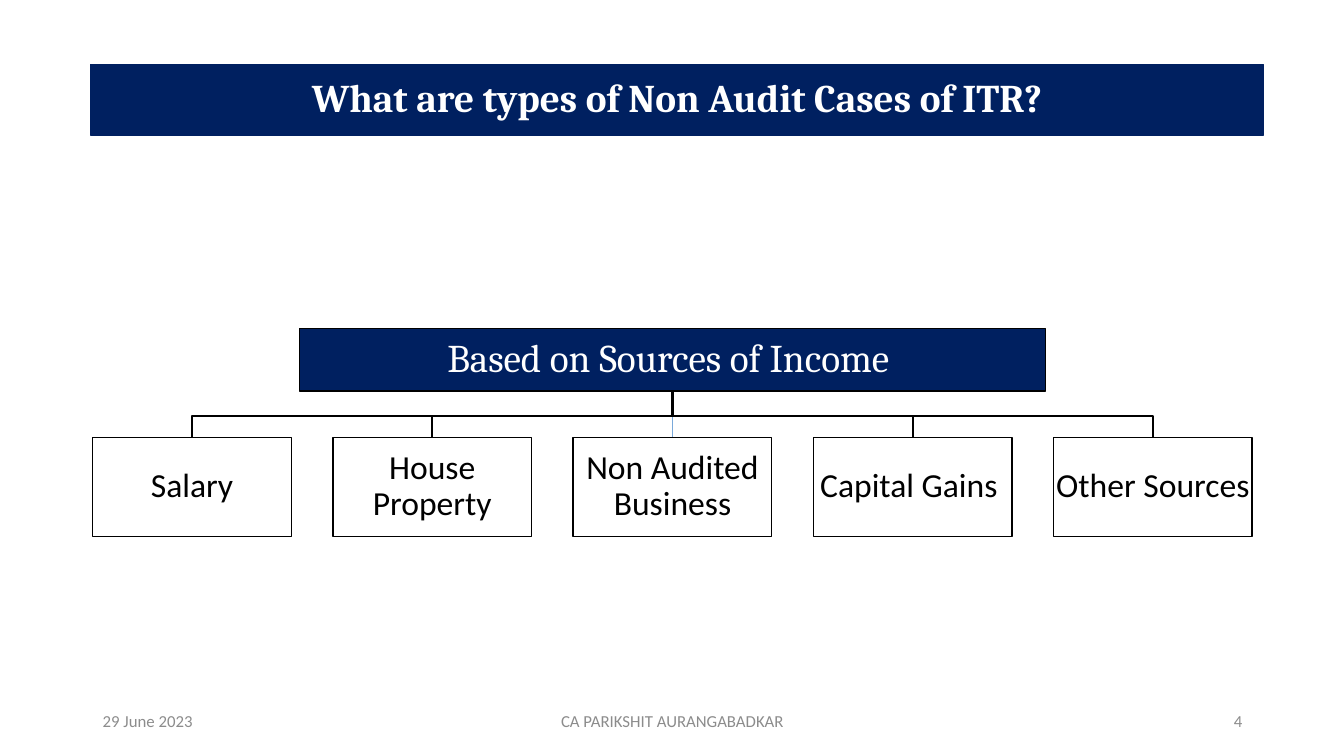
from lxml import etree
from pptx import Presentation
from pptx.dml.color import RGBColor
from pptx.enum.shapes import MSO_CONNECTOR, MSO_SHAPE
from pptx.enum.text import MSO_ANCHOR, PP_ALIGN
from pptx.oxml.ns import qn
from pptx.util import Inches, Pt

RECT = MSO_SHAPE.RECTANGLE
STRAIGHT = MSO_CONNECTOR.STRAIGHT
MIDDLE = MSO_ANCHOR.MIDDLE
LEFT, CENTER, RIGHT = PP_ALIGN.LEFT, PP_ALIGN.CENTER, PP_ALIGN.RIGHT
NAVY, BLACK, WHITE = "002060", "000000", "FFFFFF"
GREY, LIGHT_BLUE = "8C8C8C", "7AA9DA"
SOURCES = ["Salary", "House Property", "Non Audited Business",
           "Capital Gains ", "Other Sources"]


def rgb(value):
    return RGBColor.from_string(value)


def write(sp, text, size, font, color, align=CENTER, bold=False, spacing=0.9, inset=None):
    tf = sp.text_frame
    tf.word_wrap = True
    tf.vertical_anchor = MIDDLE
    if inset is not None:
        tf.margin_left = tf.margin_right = Inches(inset)
        tf.margin_top = tf.margin_bottom = Inches(inset)
    p = tf.paragraphs[0]
    p.alignment = align
    p.line_spacing = spacing
    r = p.add_run()
    r.text = text
    r.font.size = Pt(size)
    r.font.name = font
    r.font.bold = bold
    r.font.color.rgb = rgb(color)


def add_box(s, x, y, w, h, fill, line):
    sp = s.shapes.add_shape(RECT, Inches(x), Inches(y), Inches(w), Inches(h))
    sp.shadow.inherit = False
    sp.fill.solid()
    sp.fill.fore_color.rgb = rgb(fill)
    sp.line.color.rgb = rgb(line)
    sp.line.width = Pt(1)
    return sp


def add_elbow(s, x1, y1, x2, y2, bend):
    points = [(x1, bend), (x2, bend), (x2, y2)]
    builder = s.shapes.build_freeform(Inches(x1), Inches(y1))
    builder.add_line_segments([(Inches(x), Inches(y)) for x, y in points], close=False)
    sp = builder.convert_to_shape()
    sp.shadow.inherit = False
    sp.fill.background()
    sp.line.color.rgb = rgb(BLACK)
    sp.line.width = Pt(1.5)


def add_link(s, parent, child):
    link = s.shapes.add_connector(STRAIGHT, 0, 0, 0, 0)
    link.begin_connect(parent, 2)
    link.end_connect(child, 0)
    link.line.color.rgb = rgb(LIGHT_BLUE)
    link.line.width = Pt(1)
    etree.SubElement(link._element.spPr, qn("a:effectLst"))


def title_bar(s, x, y, w, h):
    sp = add_box(s, x, y, w, h, NAVY, NAVY)
    write(sp, "What are types of Non Audit Cases of ITR?", 28, "Cambria", WHITE, bold=True)


def source_tree(s, x, y, w, h):
    root_w, root_h, leaf_w, leaf_h = 7.4, 0.62, 1.97, 0.98
    center, root_bottom, leaf_top = x + w / 2, y + root_h, y + h - leaf_h
    root = add_box(s, center - root_w / 2, y, root_w, root_h, NAVY, BLACK)
    write(root, "Based on Sources of Income ", 28, "Cambria", WHITE, inset=0.02)

    step = (w - leaf_w) / (len(SOURCES) - 1)
    leaves = []
    for i, source in enumerate(SOURCES):
        leaf = add_box(s, x + i * step, leaf_top, leaf_w, leaf_h, WHITE, BLACK)
        write(leaf, source, 24, "Calibri", BLACK, inset=0.02)
        leaves.append(leaf)

    middle = len(SOURCES) // 2
    add_link(s, root, leaves[middle])
    for i in range(len(SOURCES)):
        if i != middle:
            leaf_x = x + i * step + leaf_w / 2
            add_elbow(s, center, root_bottom, leaf_x, leaf_top, root_bottom + 0.25)


def footer(s, x, y, w, h):
    side_w, center_w = 3, 4.5
    parts = [
        ("29 June 2023", x, side_w, LEFT),
        ("CA PARIKSHIT AURANGABADKAR", x + (w - center_w) / 2, center_w, CENTER),
        ("4", x + w - side_w, side_w, RIGHT),
    ]
    for text, left, width, align in parts:
        sp = s.shapes.add_textbox(Inches(left), Inches(y), Inches(width), Inches(h))
        write(sp, text, 12, "Calibri", GREY, align, spacing=1.0)


def main():
    prs = Presentation()
    prs.slide_width, prs.slide_height = Inches(13.33), Inches(7.5)
    s = prs.slides.add_slide(prs.slide_layouts[6])
    title_bar(s, 0.9, 0.64, 11.63, 0.7)
    source_tree(s, 0.92, 3.26, 11.5, 2.06)
    footer(s, 0.92, 6.95, 11.5, 0.4)
    prs.save("out.pptx")


if __name__ == "__main__":
    main()
